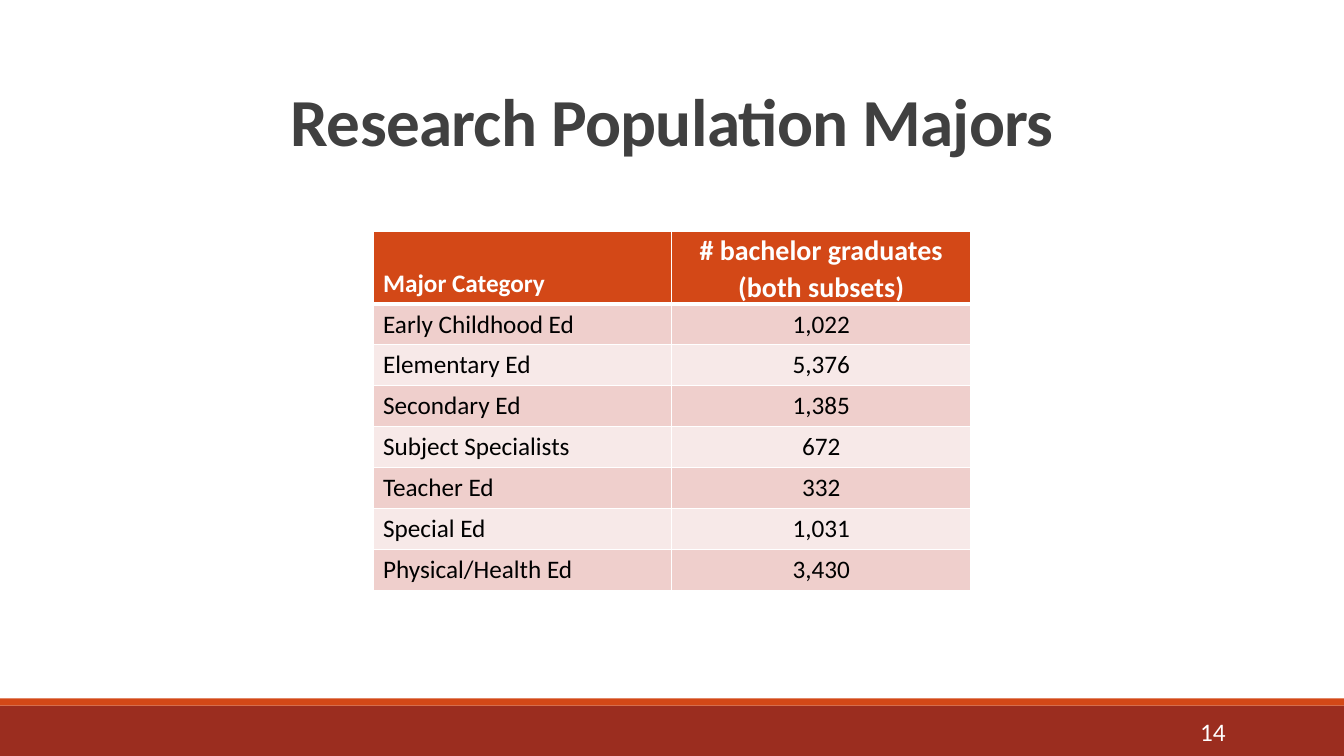
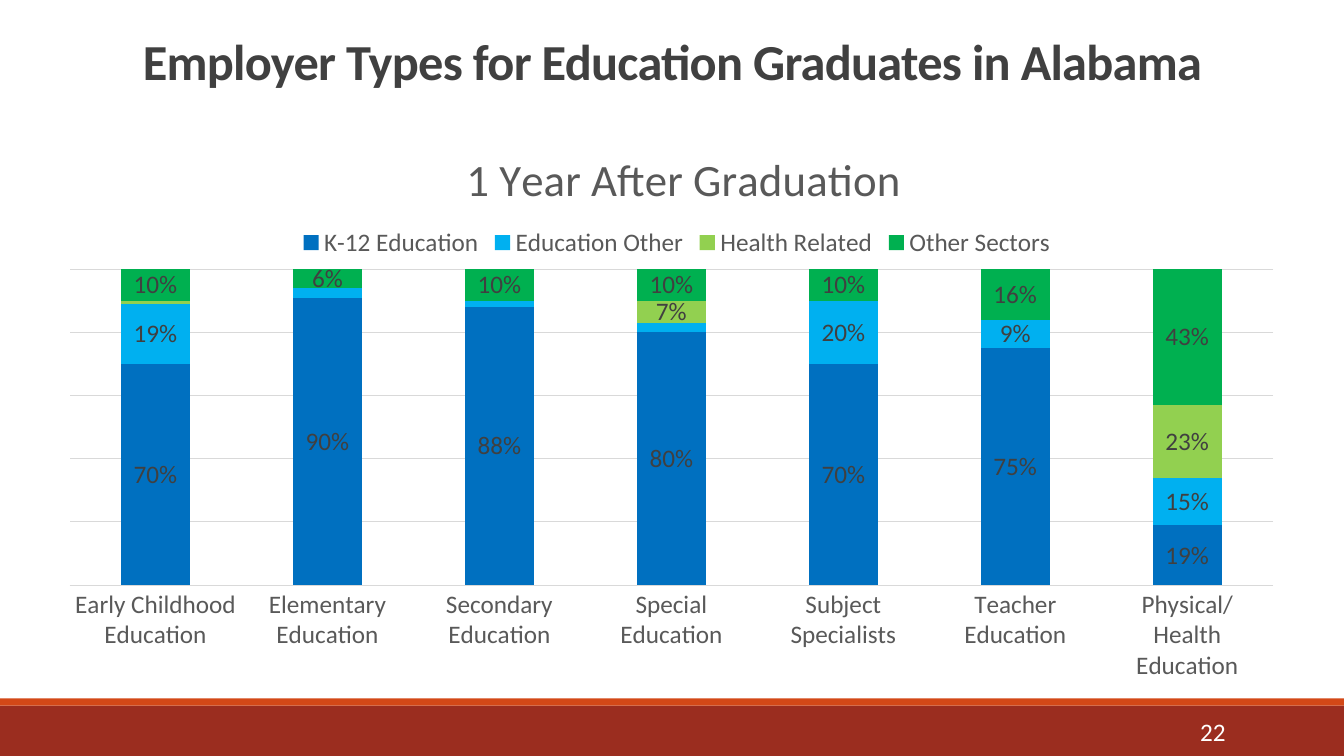
from dataclasses import dataclass

from lxml import etree
from pptx import Presentation
from pptx import util as u
from pptx.chart.data import CategoryChartData
from pptx.dml.color import RGBColor
from pptx.enum import chart as ch, shapes, text
from pptx.oxml import parse_xml
from pptx.oxml.ns import nsdecls, qn

# Shared look
FONT = "Calibri"
WHITE = RGBColor(0xFF, 0xFF, 0xFF)
BLACK = RGBColor(0, 0, 0)
INK = RGBColor(0x40, 0x40, 0x40)
GREY = RGBColor(0x59, 0x59, 0x59)
RULE = RGBColor(0xD9, 0xD9, 0xD9)
BRICK = RGBColor(0x9B, 0x2D, 0x1F)
ORANGE = RGBColor(0xD3, 0x48, 0x17)
ROW_TINTS = (RGBColor(0xEF, 0xCF, 0xCC), RGBColor(0xF7, 0xE9, 0xE8))

SLIDE_W, SLIDE_H = u.Cm(33.87), u.Cm(19.05)
BODY_SIZE = 18
SMALLEST_LABEL = 0.05


@dataclass(frozen=True)
class Band:
    top: float
    height: float
    color: RGBColor


@dataclass(frozen=True)
class Heading:
    words: str
    top: float
    height: float
    size: int


@dataclass(frozen=True)
class Sector:
    name: str
    shares: tuple[float, ...]
    color: RGBColor


BANDS = (Band(17.78, 1.27, BRICK), Band(17.6, 0.18, ORANGE))

MAJORS = (
    ("Early Childhood Ed", "1,022"),
    ("Elementary Ed", "5,376"),
    ("Secondary Ed", "1,385"),
    ("Subject Specialists", "672"),
    ("Teacher Ed", "332"),
    ("Special Ed", "1,031"),
    ("Physical/Health Ed", "3,430"),
)

PROGRAMS = (
    "Early Childhood Education", "Elementary Education", "Secondary Education",
    "Special Education", "Subject Specialists", "Teacher Education",
    "Physical/ Health Education",
)
SECTORS = (
    Sector("K-12 Education", (0.7, 0.9, 0.88, 0.8, 0.7, 0.75, 0.19), RGBColor(0, 0x70, 0xC0)),
    Sector("Education Other", (0.19, 0.03, 0.02, 0.03, 0.2, 0.09, 0.15), RGBColor(0, 0xB0, 0xF0)),
    Sector("Health Related", (0.01, 0, 0, 0.07, 0, 0, 0.23), RGBColor(0x92, 0xD0, 0x50)),
    Sector("Other Sectors", (0.1, 0.06, 0.1, 0.1, 0.1, 0.16, 0.43), RGBColor(0, 0xB0, 0x50)),
)


def style_font(font, size: float, color: RGBColor, bold: bool = False) -> None:
    font.name = FONT
    font.size = u.Pt(size)
    font.bold = bold
    font.color.rgb = color


def add_line(slide, words: str, box: tuple[float, ...], anchor, align):
    """Add a one-line text box and return its paragraph."""
    frame = slide.shapes.add_textbox(*map(u.Cm, box)).text_frame
    frame.word_wrap = True
    frame.vertical_anchor = anchor
    frame.text = words
    line = frame.paragraphs[0]
    line.alignment = align
    return line


def add_framed_slide(deck, heading: Heading, number: int):
    """Add a slide with the bands, title and page number."""
    slide = deck.slides.add_slide(deck.slide_layouts[6])
    for band in BANDS:
        strip = slide.shapes.add_shape(
            shapes.MSO_SHAPE.RECTANGLE, 0, u.Cm(band.top), SLIDE_W, u.Cm(band.height))
        strip.shadow.inherit = False
        strip.fill.solid()
        strip.fill.fore_color.rgb = band.color
        strip.line.fill.background()

    title = add_line(slide, heading.words, (2.34, heading.top, 29.21, heading.height),
                     text.MSO_ANCHOR.BOTTOM, text.PP_ALIGN.CENTER)
    title.line_spacing = 0.85
    style_font(title.runs[0].font, heading.size, INK, bold=True)
    title.runs[0].font._element.set("spc", "-50")

    page = add_line(slide, str(number), (27.51, 17.93, 3.63, 1.02),
                    text.MSO_ANCHOR.MIDDLE, text.PP_ALIGN.RIGHT)
    style_font(page.runs[0].font, BODY_SIZE, WHITE)
    return slide


# Table
def add_borders(cell, widths: dict[str, float]) -> None:
    properties = cell._tc.get_or_add_tcPr()
    for side, points in widths.items():
        properties.append(parse_xml(
            f'<a:ln{side} {nsdecls("a")} w="{u.Pt(points)}"><a:solidFill>'
            f'<a:srgbClr val="{WHITE}"/></a:solidFill></a:ln{side}>'))


def add_majors_table(slide) -> None:
    header_height, row_height, column_width = u.Cm(1.83), u.Cm(1.03), u.Cm(7.53)
    rows = (("Major Category", "# bachelor graduates\n(both subsets)"), *MAJORS)
    table = slide.shapes.add_table(
        len(rows), 2, u.Cm(9.4), u.Cm(5.83), 2 * column_width,
        header_height + len(MAJORS) * row_height).table
    for column in table.columns:
        column.width = column_width

    for r, values in enumerate(rows):
        is_header = r == 0
        table.rows[r].height = header_height if is_header else row_height
        for c, value in enumerate(values):
            cell = table.cell(r, c)
            is_count_header = is_header and c == 1
            add_borders(cell, {"L": 1, "R": 1, "T": 3 if r == 1 else 1, "B": 3 if is_header else 1})
            cell.fill.solid()
            cell.fill.fore_color.rgb = ORANGE if is_header else ROW_TINTS[(r - 1) % 2]
            if is_header:
                cell.vertical_anchor = text.MSO_ANCHOR.BOTTOM
            if is_count_header:
                cell.margin_left = cell.margin_right = u.Cm(0.18)
                cell.margin_top = cell.margin_bottom = 0
            cell.text_frame.text = value
            for line in cell.text_frame.paragraphs:
                if c == 1:
                    line.alignment = text.PP_ALIGN.CENTER
                if is_count_header:
                    line.line_spacing = 1.07
                style_font(line.runs[0].font, 20 if is_count_header else BODY_SIZE,
                           WHITE if is_header else BLACK, bold=is_header)


# Chart
def place(element, index: int, **fractions: float) -> None:
    """Give a chart part a fixed place, in fractions of the chart."""
    for old in element.findall(qn("c:layout")):
        element.remove(old)
    layout = parse_xml(f'<c:layout {nsdecls("c")}><c:manualLayout/></c:layout>')
    manual = layout[0]
    settings = {"xMode": "edge", "yMode": "edge", **fractions}
    if "w" in fractions:
        settings = {"layoutTarget": "inner", **settings}
    for tag, value in settings.items():
        etree.SubElement(manual, qn(f"c:{tag}")).set("val", str(value))
    element.insert(index, layout)


def label_shares(series, sector: Sector) -> None:
    labels = series.data_labels
    labels.show_value = True
    labels.position = ch.XL_LABEL_POSITION.CENTER
    labels.number_format = "0%"
    labels.number_format_is_linked = False
    style_font(labels.font, BODY_SIZE, INK)
    too_small = [i for i, share in enumerate(sector.shares) if share < SMALLEST_LABEL]
    for position, point in enumerate(too_small):
        labels._element.insert(position, parse_xml(
            f'<c:dLbl {nsdecls("c")}><c:idx val="{point}"/><c:delete val="1"/></c:dLbl>'))


def add_employer_chart(slide) -> None:
    data = CategoryChartData(number_format="0%")
    data.categories = PROGRAMS
    for sector in SECTORS:
        data.add_series(sector.name, sector.shares)
    chart = slide.shapes.add_chart(
        ch.XL_CHART_TYPE.COLUMN_STACKED_100, u.Cm(1.12), u.Cm(2.8),
        u.Cm(31.6), u.Cm(14.75), data).chart
    style_font(chart.font, 10, BLACK)

    # Title and legend
    chart.has_title = True
    chart.chart_title.text_frame.text = "1 Year After Graduation"
    style_font(chart.chart_title.text_frame.paragraphs[0].runs[0].font, 32, GREY)
    chart.has_legend = True
    chart.legend.position = ch.XL_LEGEND_POSITION.TOP
    chart.legend.include_in_layout = False
    style_font(chart.legend.font, BODY_SIZE, GREY)

    # Axes
    programs, shares = chart.category_axis, chart.value_axis
    programs.major_tick_mark = ch.XL_TICK_MARK.NONE
    style_font(programs.tick_labels.font, BODY_SIZE, GREY)
    shares.visible = False
    shares.minimum_scale, shares.maximum_scale, shares.major_unit = 0, 1, 0.2
    shares.has_major_gridlines = True
    for line in (programs.format.line, shares.major_gridlines.format.line):
        line.color.rgb = RULE
        line.width = u.Pt(0.75)

    # Columns
    plot = chart.plots[0]
    plot.vary_by_categories = False
    plot.gap_width, plot.overlap = 150, 100
    for series, sector in zip(plot.series, SECTORS):
        series.format.fill.solid()
        series.format.fill.fore_color.rgb = sector.color
        label_shares(series, sector)

    place(chart.chart_title._element, 1, x=0.33, y=0.05)
    place(chart.legend._element, 1, x=0.2, y=0.19)
    place(chart._chartSpace.chart.plotArea, 0, x=0.02, y=0.27, w=0.96, h=0.54)


def main() -> None:
    deck = Presentation()
    deck.slide_width, deck.slide_height = SLIDE_W, SLIDE_H

    majors = Heading("Research Population Majors", 1.63, 2.54, 48)
    add_majors_table(add_framed_slide(deck, majors, 14))

    employers = Heading("Employer Types for Education Graduates in Alabama", 0.3, 2.11, 36)
    add_employer_chart(add_framed_slide(deck, employers, 22))

    deck.save("out.pptx")


if __name__ == "__main__":
    main()
